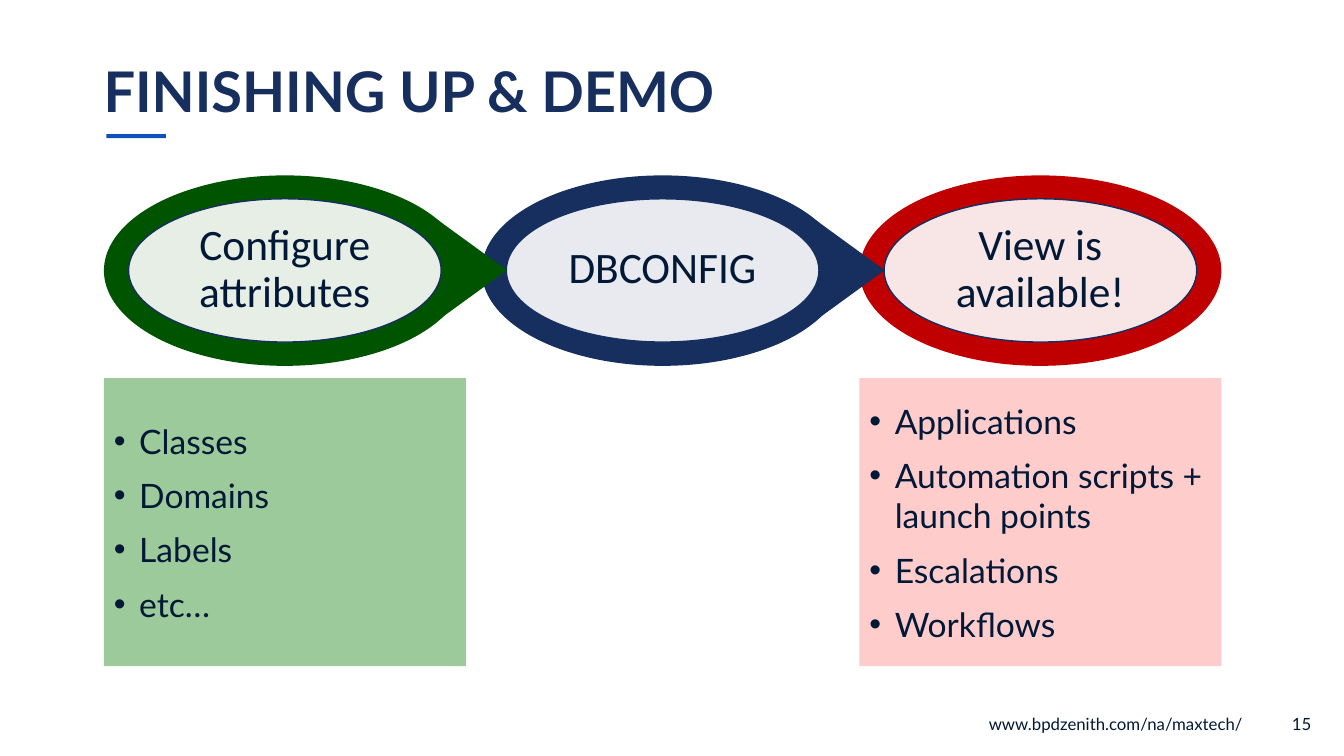
from dataclasses import dataclass

from lxml.etree import SubElement
from pptx import Presentation
from pptx.dml.color import RGBColor
from pptx.enum.shapes import MSO_SHAPE as Shape
from pptx.enum.text import MSO_ANCHOR as Anchor, PP_ALIGN as Align
from pptx.oxml.ns import qn
from pptx.util import Cm, Pt


@dataclass(frozen=True)
class Theme:
    ink: str = "011936"
    navy: str = "172F5E"
    accent: str = "0D50BC"
    green: str = "005400"
    pale_green: str = "9DCA9A"
    red: str = "C00000"
    pale_red: str = "FFCCCC"
    white: str = "FFFFFF"
    font: str = "Lato"
    step_font: str = "Calibri"
    title_size: int = 40
    step_size: int = 31
    list_size: int = 24
    footer_size: int = 12


THEME = Theme()

# Chain geometry in cm
CHAIN_LEFT, CHAIN_TOP, CHAIN_STEP = 2.62, 4.42, 9.52
RING_WIDTH, RING_HEIGHT = 9.12, 4.8
LIST_TOP, LIST_HEIGHT = 9.53, 7.26

STEPS = [
    ("Configure attributes", THEME.green),
    ("DBCONFIG", THEME.navy),
    ("View is available!", THEME.red),
]
LISTS = [
    (0, THEME.pale_green, ["Classes", "Domains", "Labels", "etc…"]),
    (2, THEME.pale_red, ["Applications", "Automation scripts + launch points",
                         "Escalations", "Workflows"]),
]


def apply(target, formats):
    for name, value in formats.items():
        setattr(target, name, value)


def add_filled(slide, kind, box, color):
    """Flat shape without outline or shadow; box is in cm."""
    figure = slide.shapes.add_shape(kind, *map(Cm, box))
    figure.shadow.inherit = False
    figure.fill.solid()
    figure.fill.fore_color.rgb = RGBColor.from_string(color)
    figure.line.fill.background()
    return figure


def style_paragraph(paragraph, text, size, font=THEME.font, color=THEME.ink,
                    bold=False, **formats):
    paragraph.text = text
    apply(paragraph, formats)
    apply(paragraph.font, {"name": font, "size": Pt(size), "bold": bold})
    paragraph.font.color.rgb = RGBColor.from_string(color)


def add_label(slide, box, text, size, anchor=Anchor.MIDDLE, inset=None, **formats):
    frame = slide.shapes.add_textbox(*map(Cm, box)).text_frame
    apply(frame, {"word_wrap": True, "vertical_anchor": anchor})
    if inset is not None:
        sides = ("left", "right", "top", "bottom")
        apply(frame, {f"margin_{side}": Cm(inset) for side in sides})
    style_paragraph(frame.paragraphs[0], text, size, **formats)


def add_bullet(paragraph):
    properties = paragraph._p.get_or_add_pPr()
    properties.set("marL", str(Cm(0.64)))
    properties.set("indent", str(Cm(-0.64)))
    SubElement(properties, qn("a:buFont")).set("typeface", "Arial")
    SubElement(properties, qn("a:buChar")).set("char", "•")


def add_list(slide, column, color, items):
    left = CHAIN_LEFT + column * CHAIN_STEP
    panel = add_filled(slide, Shape.RECTANGLE,
                       (left, LIST_TOP, RING_WIDTH, LIST_HEIGHT), color)
    frame = panel.text_frame
    apply(frame, {"word_wrap": True, "vertical_anchor": Anchor.MIDDLE})
    for number, item in enumerate(items):
        paragraph = frame.add_paragraph() if number else frame.paragraphs[0]
        add_bullet(paragraph)
        style_paragraph(paragraph, item, THEME.list_size, alignment=Align.LEFT,
                        space_before=Pt(10 if number else 0))


def add_step(slide, column, text, color, has_pointer):
    left = CHAIN_LEFT + column * CHAIN_STEP
    # Pointer towards the next step
    if has_pointer:
        pointer = add_filled(slide, Shape.REGULAR_PENTAGON,
                             (left + 6.64, CHAIN_TOP + 0.13, 2.51, 4.52), color)
        pointer.rotation = 90
    # Ring and its translucent centre
    add_filled(slide, Shape.OVAL, (left, CHAIN_TOP, RING_WIDTH, RING_HEIGHT), color)
    centre = add_filled(slide, Shape.OVAL,
                        (left + 0.62, CHAIN_TOP + 0.59, 7.88, 3.61), THEME.white)
    tint = centre.fill._xPr.find(qn("a:solidFill"))[0]
    SubElement(tint, qn("a:alpha")).set("val", "90000")
    centre.line.color.rgb = RGBColor.from_string(THEME.navy)
    centre.line.width = Pt(1)
    add_label(slide, (left + 1.75, CHAIN_TOP + 1.09, 5.61, 2.57), text,
              THEME.step_size, inset=0.1, font=THEME.step_font,
              alignment=Align.CENTER, line_spacing=0.9)


def add_footer(slide, left, width, text):
    add_label(slide, (left, 17.85, width, 0.77), text, THEME.footer_size,
              anchor=Anchor.TOP, alignment=Align.RIGHT)


def main():
    deck = Presentation()
    apply(deck, {"slide_width": Cm(33.87), "slide_height": Cm(19.05)})
    slide = deck.slides.add_slide(deck.slide_layouts[6])

    # Heading with its accent rule
    add_filled(slide, Shape.RECTANGLE, (2.68, 3.38, 1.5, 0.1), THEME.accent)
    add_label(slide, (2.36, 1.04, 29.21, 2.69), "FINISHING UP & DEMO",
              THEME.title_size, color=THEME.navy, bold=True, line_spacing=0.9)

    # Steps from right to left, so each pointer overlaps the next ring
    last = len(STEPS) - 1
    for column, (text, color) in reversed(list(enumerate(STEPS))):
        add_step(slide, column, text, color, has_pointer=column < last)

    # Details under the steps
    for column, color, items in LISTS:
        add_list(slide, column, color, items)

    # Footer
    add_footer(slide, 23.62, 7.95, "www.bpdzenith.com/na/maxtech/")
    add_footer(slide, 31.42, 1.88, "15")

    deck.save("out.pptx")


if __name__ == "__main__":
    main()
